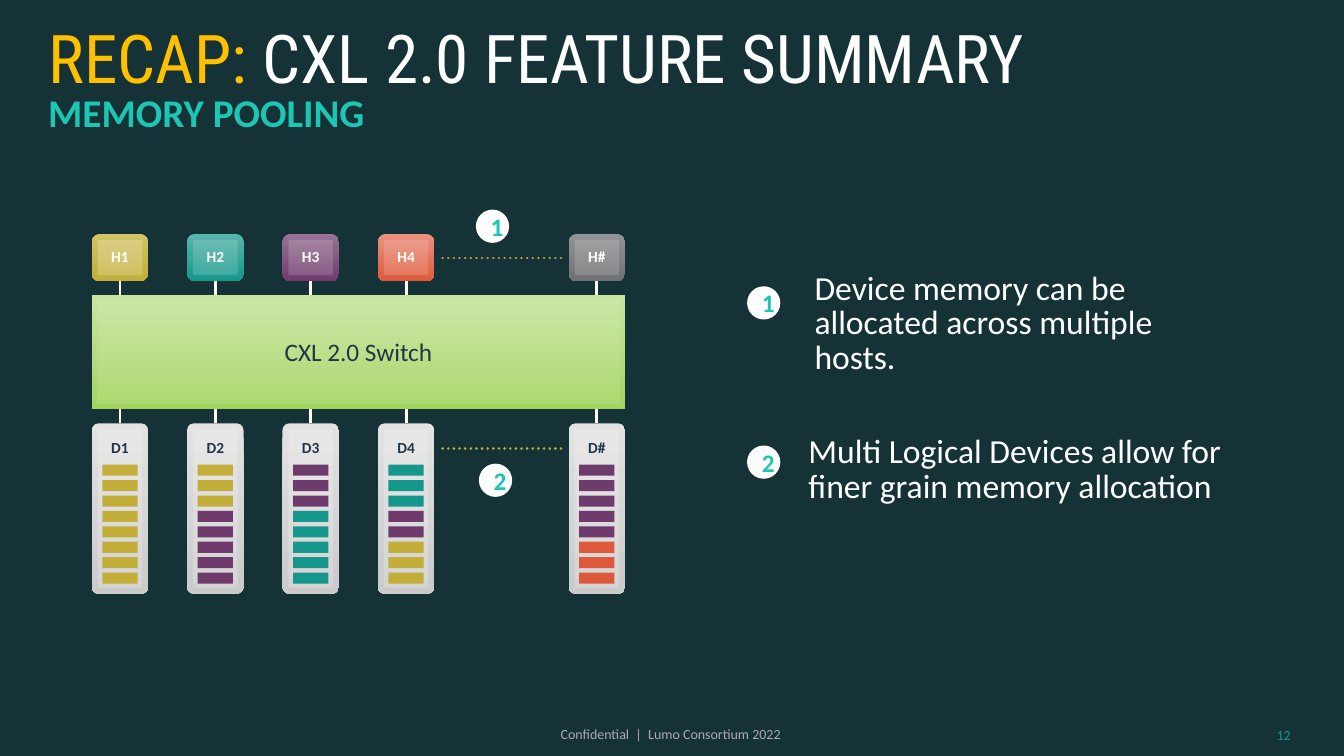
from lxml.etree import SubElement
from pptx import Presentation
from pptx.dml.color import RGBColor
from pptx.enum.dml import MSO_LINE
from pptx.enum.shapes import MSO_CONNECTOR, MSO_SHAPE
from pptx.enum.text import MSO_ANCHOR, MSO_AUTO_SIZE, PP_ALIGN
from pptx.oxml.ns import qn
from pptx.util import Inches, Pt

BACKGROUND = RGBColor(0x15, 0x32, 0x36)
WHITE = RGBColor(0xFF, 0xFF, 0xFF)
AMBER = RGBColor(0xFF, 0xC0, 0x00)
AQUA = RGBColor(0x1D, 0xC5, 0xB5)
NAVY = RGBColor(0x22, 0x36, 0x47)
FOOTER_GRAY = RGBColor(0xAA, 0xAA, 0xB6)
GOLD, GOLD_LIGHT = RGBColor(0xC2, 0xAE, 0x38), RGBColor(0xD3, 0xC4, 0x68)
TEAL, TEAL_LIGHT = RGBColor(0x16, 0x97, 0x8B), RGBColor(0x59, 0xB6, 0xAC)
PLUM, PLUM_LIGHT = RGBColor(0x6F, 0x3B, 0x6D), RGBColor(0x99, 0x74, 0x96)
CORAL, CORAL_LIGHT = RGBColor(0xDE, 0x59, 0x3A), RGBColor(0xEA, 0x93, 0x7F)
GRAY, GRAY_LIGHT = RGBColor(0x6F, 0x70, 0x72), RGBColor(0x93, 0x94, 0x96)
SILVER, SILVER_LIGHT = RGBColor(0xCA, 0xCA, 0xCB), RGBColor(0xE2, 0xE2, 0xE2)
GREEN, GREEN_LIGHT = RGBColor(0xA2, 0xD4, 0x5F), RGBColor(0xC7, 0xE5, 0x9F)

# Content
TITLE = [("RECAP: ", AMBER), ("CXL 2.0 FEATURE SUMMARY", WHITE)]
SUBTITLE = "MEMORY POOLING"
SWITCH_LABEL = "CXL 2.0 Switch"
FOOTER = "Confidential  |  Lumo Consortium 2022"
PAGE_NUMBER = "12"
# suffix, column slot, host gradient, highlight alpha, memory blocks (colour, count)
COLUMNS = [
    ("1", 0, (GOLD_LIGHT, GOLD), 20, [(GOLD, 8)]),
    ("2", 1, (TEAL_LIGHT, TEAL), 15, [(GOLD, 3), (PLUM, 5)]),
    ("3", 2, (PLUM_LIGHT, PLUM), 15, [(PLUM, 3), (TEAL, 5)]),
    ("4", 3, (CORAL_LIGHT, CORAL), 15, [(TEAL, 3), (PLUM, 2), (GOLD, 3)]),
    ("#", 5, (GRAY_LIGHT, GRAY), 15, [(PLUM, 5), (CORAL, 3)]),
]
# text, left, top
NOTES = [
    ("Device memory can be allocated across multiple hosts.", 7.98, 2.66),
    ("Multi Logical Devices allow for finer grain memory allocation", 7.92, 4.28),
]
# number, left, top
BADGES = [("1", 7.41, 2.84), ("2", 7.41, 4.42), ("1", 4.72, 2.08), ("2", 4.75, 4.6)]

# Diagram geometry in inches
LEFT, LAST_LEFT, LAST_SLOT = 0.91, 5.64, 5
PITCH = (LAST_LEFT - LEFT) / LAST_SLOT
BOX_W, EDGE = 0.56, 0.06
SWITCH_W = LAST_LEFT + BOX_W - LEFT
HOST_Y, HOST_H = 2.32, 0.47
SWITCH_Y, SWITCH_H = 2.93, 1.13
DEVICE_Y, DEVICE_H = 4.2, 1.69
BLOCK_Y, BLOCK_END, BLOCK_COUNT = 4.61, 5.68, 8
BLOCK_STEP = (BLOCK_END - BLOCK_Y) / (BLOCK_COUNT - 1)
BLOCK_W, BLOCK_H = 0.35, 0.11

prs = Presentation()
prs.slide_width, prs.slide_height = Inches(13.33), Inches(7.5)
s = prs.slides.add_slide(prs.slide_layouts[5])
s.background.fill.solid()
s.background.fill.fore_color.rgb = BACKGROUND


def format_run(r, size, color, bold=False, font="Calibri"):
    r.font.size, r.font.name, r.font.bold = Pt(size), font, bold
    r.font.color.rgb = color


def add_text(text, x, y, w, h, size, color, bold=False, align=PP_ALIGN.LEFT,
             spacing=0.85, anchor=MSO_ANCHOR.TOP):
    sp = s.shapes.add_textbox(Inches(x), Inches(y), Inches(w), Inches(h))
    tf = sp.text_frame
    tf.word_wrap, tf.vertical_anchor = True, anchor
    p = tf.paragraphs[0]
    p.text, p.alignment, p.line_spacing = text, align, spacing
    format_run(p.runs[0], size, color, bold)
    return sp


def add_box(kind, x, y, w, h, fill, alpha=100, adj=None, angle=270):
    """Fill is one colour, or a pair of colours for a gradient."""
    sp = s.shapes.add_shape(kind, Inches(x), Inches(y), Inches(w), Inches(h))
    sp.shadow.inherit = False
    sp.line.fill.background()
    if adj is not None:
        sp.adjustments[0] = adj
    if isinstance(fill, RGBColor):
        sp.fill.solid()
        sp.fill.fore_color.rgb = fill
        if alpha < 100:
            color = sp.fill._xPr.find(qn("a:solidFill"))[0]
            SubElement(color, qn("a:alpha")).set("val", str(alpha * 1000))
    else:
        sp.fill.gradient()
        sp.fill.gradient_angle = angle
        for stop, color in zip(sp.fill.gradient_stops, fill):
            stop.color.rgb = color
    return sp


def add_line(x1, y1, x2, y2, color):
    line = s.shapes.add_connector(MSO_CONNECTOR.STRAIGHT, Inches(x1), Inches(y1),
                                  Inches(x2), Inches(y2))
    line.line.color.rgb, line.line.width = color, Pt(2)
    SubElement(line._element.spPr, qn("a:effectLst"))
    return line


def add_module(label, x, y, h, fill, alpha, adj, label_y, color):
    """Rounded module with a lighter inner face and a label."""
    body = add_box(MSO_SHAPE.ROUNDED_RECTANGLE, x, y, BOX_W, h, fill, adj=adj)
    add_box(MSO_SHAPE.ROUNDED_RECTANGLE, x + EDGE, y + EDGE, BOX_W - 2 * EDGE,
            h - 2 * EDGE, WHITE, alpha, adj=0.04)
    add_text(label, x + EDGE, label_y, BOX_W - 2 * EDGE, 0.26, 11, color, True,
             PP_ALIGN.CENTER)
    return body


# Title and subtitle
title = s.shapes.title
title.left, title.top = Inches(0.38), Inches(0.2)
title.width, title.height = Inches(11.31), Inches(0.62)
tf = title.text_frame
tf.auto_size, tf.vertical_anchor = MSO_AUTO_SIZE.NONE, MSO_ANCHOR.TOP
p = tf.paragraphs[0]
p.alignment, p.line_spacing = PP_ALIGN.LEFT, 0.9
for text, color in TITLE:
    r = p.add_run()
    r.text = text
    format_run(r, 48, color, font="Roboto Condensed")
add_text(SUBTITLE, 0.38, 0.9, 5.65, 0.5, 28, AQUA, True)

# Switch
add_box(MSO_SHAPE.RECTANGLE, LEFT, SWITCH_Y, SWITCH_W, SWITCH_H,
        (GREEN, GREEN_LIGHT), angle=90)
add_box(MSO_SHAPE.RECTANGLE, LEFT + 0.05, SWITCH_Y + 0.05, SWITCH_W - 0.1,
        SWITCH_H - 0.1, WHITE, 10)
add_text(SWITCH_LABEL, LEFT, 3.33, SWITCH_W, 0.36, 18, NAVY, align=PP_ALIGN.CENTER)

# Hosts, devices, memory blocks and their links to the switch
for suffix, slot, host_fill, alpha, memory in COLUMNS:
    x = LEFT + slot * PITCH
    center = x + BOX_W / 2
    host = add_module("H" + suffix, x, HOST_Y, HOST_H, host_fill, alpha, 0.17,
                      2.43, WHITE)
    device = add_module("D" + suffix, x, DEVICE_Y, DEVICE_H,
                        (SILVER_LIGHT, SILVER), 20, 0.12, 4.33, NAVY)
    blocks = [color for color, count in memory for _ in range(count)]
    for i, color in enumerate(blocks):
        add_box(MSO_SHAPE.RECTANGLE, center - BLOCK_W / 2, BLOCK_Y + i * BLOCK_STEP,
                BLOCK_W, BLOCK_H, color)
    add_line(center, HOST_Y + HOST_H, center, SWITCH_Y, WHITE).begin_connect(host, 2)
    add_line(center, SWITCH_Y + SWITCH_H, center, DEVICE_Y, WHITE).end_connect(device, 0)

# Dotted continuation lines with round caps
for y in (2.56, 4.45):
    dots = add_line(4.39, y, 5.57, y, GOLD)
    dots.line.dash_style = MSO_LINE.ROUND_DOT
    dots._element.spPr.find(qn("a:ln")).set("cap", "rnd")

# Notes and numbered badges
for text, x, y in NOTES:
    add_text(text, x, y, 4.42, 1.13, 24, WHITE).text_frame.margin_right = Inches(0.15)
for number, x, y in BADGES:
    tf = add_box(MSO_SHAPE.OVAL, x, y, 0.33, 0.33, WHITE).text_frame
    tf.text, tf.vertical_anchor = number, MSO_ANCHOR.MIDDLE
    tf.paragraphs[0].alignment = PP_ALIGN.CENTER
    format_run(tf.paragraphs[0].runs[0], 18, AQUA, True)

# Footer
footer = add_text(FOOTER, 2.8, 7.15, 7.57, 0.26, 10, FOOTER_GRAY, False,
                  PP_ALIGN.CENTER, 1.0, MSO_ANCHOR.MIDDLE)
footer.text_frame.margin_left = Inches(0.23)
add_text(PAGE_NUMBER, 12.23, 7.09, 0.67, 0.4, 10, TEAL, False, PP_ALIGN.RIGHT, 1.0,
         MSO_ANCHOR.MIDDLE)

prs.save("out.pptx")
